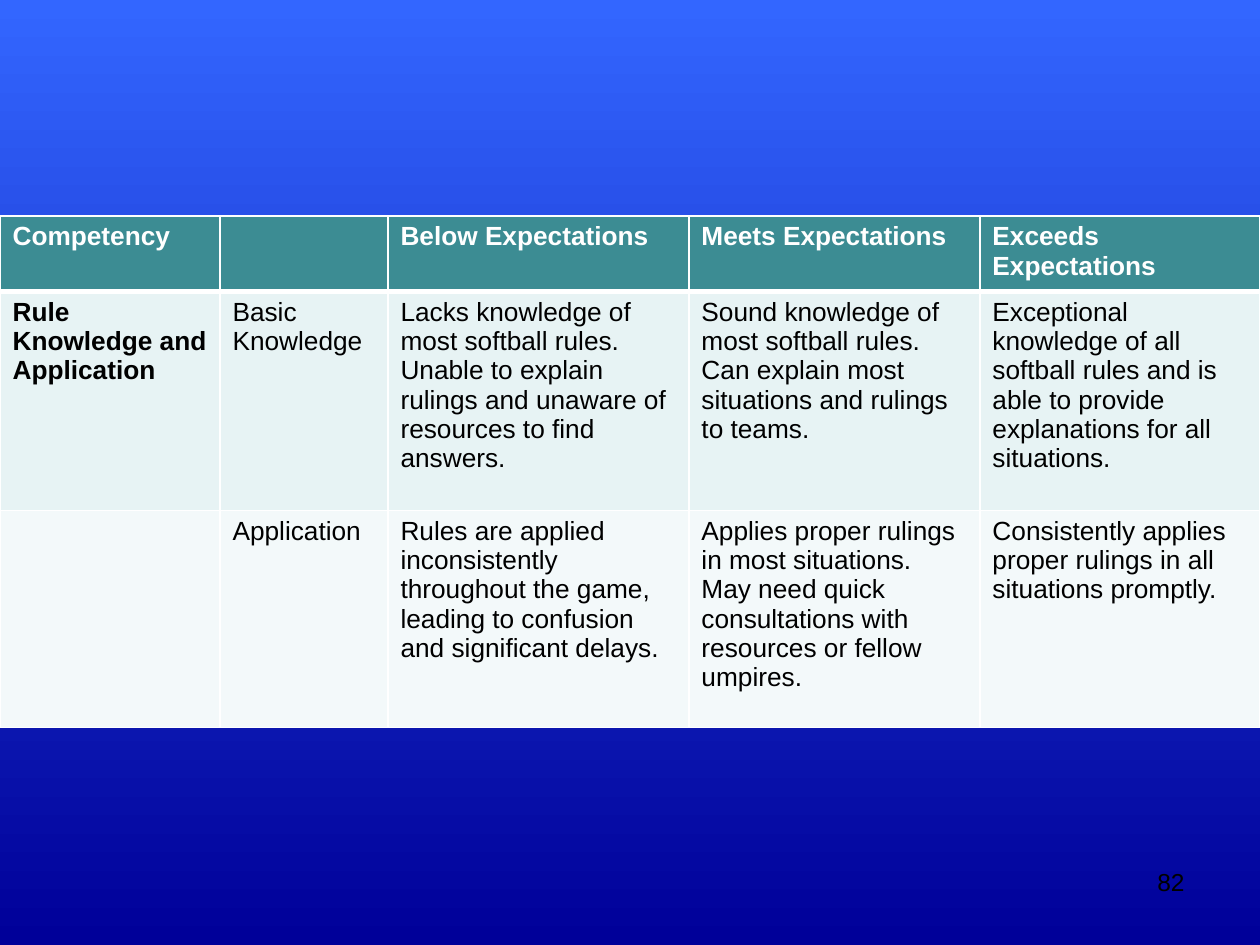
from lxml.etree import SubElement
from pptx import Presentation
from pptx.dml.color import RGBColor
from pptx.enum.text import PP_ALIGN as Align
from pptx.oxml.ns import qn
from pptx.util import Pt

PX = 914400 / 126  # EMU in one pixel
SLIDE_SIZE = (1260, 945)
WHITE, BLACK = "FFFFFF", "000000"
TEAL = "3C8C93"
BAND_FILLS = ("E7F3F4", "F3F9FA")
COLUMN_WIDTHS = (220, 168, 301, 291, 280)
ROW_HEIGHTS = (72, 219, 217)

RUBRIC = (
    ("Competency", "", "Below Expectations", "Meets Expectations",
     "Exceeds Expectations"),
    ("Rule Knowledge and Application",
     "Basic Knowledge",
     "Lacks knowledge of most softball rules.  Unable to explain rulings "
     "and unaware of resources to find answers.",
     "Sound knowledge of most softball rules.  Can explain most situations "
     "and rulings to teams.",
     "Exceptional knowledge of all softball rules and is able to provide "
     "explanations for all situations."),
    ("",
     "Application",
     "Rules are applied inconsistently throughout the game, leading to "
     "confusion and significant delays.",
     "Applies proper rulings in most situations.  May need quick "
     "consultations with resources or fellow umpires.",
     "Consistently applies proper rulings in all situations promptly."),
)


def px(length):
    return round(length * PX)


def color(hex_string):
    return RGBColor.from_string(hex_string)


def add_run(paragraph, text, size, hex_string, bold=False):
    run = paragraph.add_run()
    run.text = text
    run.font.name = "Arial"
    run.font.size = Pt(size)
    run.font.bold = bold
    run.font.color.rgb = color(hex_string)


def set_borders(cell, widths):
    """Draw white cell borders; widths maps a side (L, R, T, B) to points."""
    properties = cell._tc.get_or_add_tcPr()
    for side, width in widths.items():
        line = SubElement(properties, qn(f"a:ln{side}"), w=str(Pt(width)))
        fill = SubElement(line, qn("a:solidFill"))
        SubElement(fill, qn("a:srgbClr"), val=WHITE)


def paint_background(slide):
    fill = slide.background.fill
    fill.gradient()
    fill.gradient_angle = 270  # top to bottom
    for stop, hex_string in zip(fill.gradient_stops, ("3366FF", "000099")):
        stop.color.rgb = color(hex_string)


def add_rubric(slide, left, top, width, height):
    frame = slide.shapes.add_table(
        len(ROW_HEIGHTS), len(COLUMN_WIDTHS),
        px(left), px(top), px(width), px(height))
    table = frame.table
    for column, column_width in zip(table.columns, COLUMN_WIDTHS):
        column.width = px(column_width)
    for row, row_height in zip(table.rows, ROW_HEIGHTS):
        row.height = px(row_height)

    for row_index, texts in enumerate(RUBRIC):
        header = row_index == 0
        for column_index, text in enumerate(texts):
            cell = table.cell(row_index, column_index)
            # The rule under the header is thicker than the others
            set_borders(cell, {"L": 1, "R": 1,
                               "T": 3 if row_index == 1 else 1,
                               "B": 3 if header else 1})
            cell.fill.solid()
            cell.fill.fore_color.rgb = color(
                TEAL if header else BAND_FILLS[row_index - 1])
            if text:
                add_run(cell.text_frame.paragraphs[0], text, 15,
                        WHITE if header else BLACK,
                        bold=header or column_index == 0)


def add_slide_number(slide, left, top, width, height):
    box = slide.shapes.add_textbox(px(left), px(top), px(width), px(height))
    box.text_frame.word_wrap = True
    paragraph = box.text_frame.paragraphs[0]
    paragraph.alignment = Align.RIGHT
    add_run(paragraph, "82", 14, BLACK)


def main():
    presentation = Presentation()
    presentation.slide_width, presentation.slide_height = map(px, SLIDE_SIZE)
    slide = presentation.slides.add_slide(presentation.slide_layouts[6])
    paint_background(slide)
    add_slide_number(slide, 903, 861, 294, 66)
    add_rubric(slide, 0, 216, sum(COLUMN_WIDTHS), sum(ROW_HEIGHTS))
    presentation.save("out.pptx")


if __name__ == "__main__":
    main()
